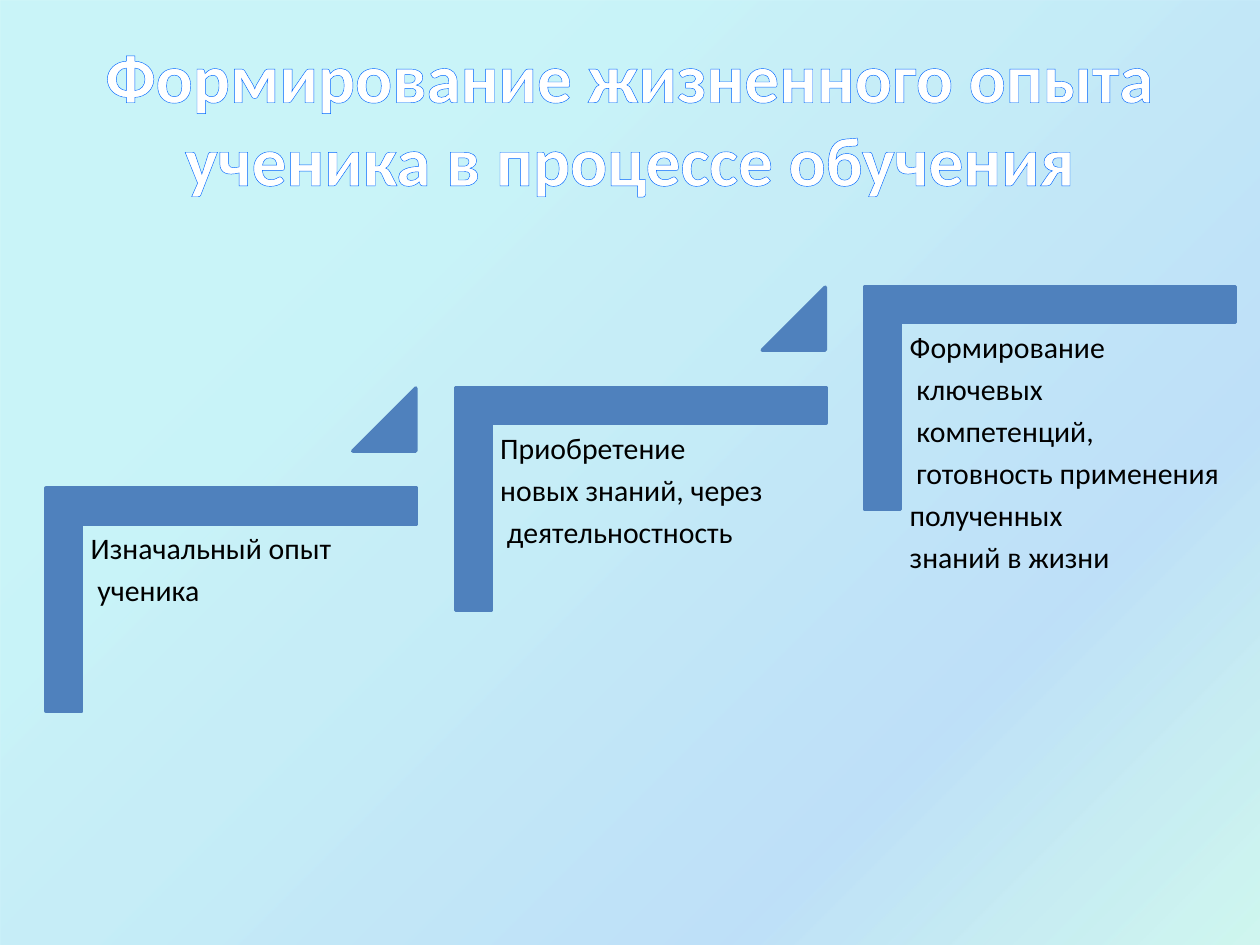
import lxml.etree
import pptx
import pptx.dml.color
import pptx.enum.shapes
import pptx.enum.text
import pptx.oxml
import pptx.oxml.ns
import pptx.util

SHAPE = pptx.enum.shapes.MSO_SHAPE
ALIGN = pptx.enum.text.PP_ALIGN
ANCHOR = pptx.enum.text.MSO_ANCHOR


def color(code):
    return pptx.dml.color.RGBColor.from_string(code)


def cells(count):
    """Length of a number of grid cells; the slide is 40 columns by 30 rows."""
    return pptx.util.Inches(count * 0.25)


class StairSlide:
    font = "Calibri"
    accent = "4F81BD"
    ink = "000000"

    def __init__(self, deck):
        self.page = deck.slides.add_slide(deck.slide_layouts[6])

    def shape(self, kind, area):
        shape = self.page.shapes.add_shape(kind, *map(cells, area))
        shape.shadow.inherit = False
        return shape

    def backdrop(self, area, stops):
        """Diagonal gradient; each stop is place, colour and opacity in percent."""
        box = self.shape(SHAPE.RECTANGLE, area)
        box.line.fill.background()
        box.fill.gradient()
        gradient = box.fill._fill._gradFill
        for child in list(gradient):
            gradient.remove(child)
        name = pptx.oxml.ns.qn
        stop_list = lxml.etree.SubElement(gradient, name("a:gsLst"))
        for place, code, opacity in stops:
            stop = lxml.etree.SubElement(stop_list, name("a:gs"), pos=str(place * 1000))
            tint = lxml.etree.SubElement(stop, name("a:srgbClr"), val=code)
            lxml.etree.SubElement(tint, name("a:alpha"), val=str(opacity * 1000))
        lxml.etree.SubElement(gradient, name("a:lin"), ang=str(45 * 60000), scaled="0")

    def solid(self, kind, area, adjustments, turn=0):
        shape = self.shape(kind, area)
        shape.rotation = turn
        for index, value in enumerate(adjustments):
            shape.adjustments[index] = value
        shape.fill.solid()
        shape.fill.fore_color.rgb = color(self.accent)
        shape.line.color.rgb = color(self.accent)
        shape.line.width = pptx.util.Pt(2)

    def frame(self, area):
        frame = self.page.shapes.add_textbox(*map(cells, area)).text_frame
        frame.word_wrap = True
        return frame

    def span(self, para, words, size, code):
        span = para.add_run()
        span.text = words
        span.font.name = self.font
        span.font.size = pptx.util.Pt(size)
        span.font.color.rgb = color(code)
        return span

    def title(self, area, words):
        frame = self.frame(area)
        frame.vertical_anchor = ANCHOR.MIDDLE
        para = frame.paragraphs[0]
        para.alignment = ALIGN.CENTER
        span = self.span(para, words, 39.6, "FFFFFF")
        span.font.bold = True
        # Blue outline around the letters
        outline = pptx.oxml.parse_xml(
            f'<a:ln {pptx.oxml.ns.nsdecls("a")} w="{pptx.util.Pt(1.45)}">'
            '<a:solidFill><a:srgbClr val="0066FF"/></a:solidFill></a:ln>')
        span.font._element.insert(0, outline)

    def label(self, area, lines):
        frame = self.frame(area)
        frame.margin_left = frame.margin_right = pptx.util.Inches(0.07)
        frame.margin_top = frame.margin_bottom = pptx.util.Inches(0.07)
        for index, words in enumerate(lines):
            para = frame.add_paragraph() if index else frame.paragraphs[0]
            para.line_spacing = 0.9
            para.space_after = pptx.util.Pt(5.6)
            self.span(para, words, 17, self.ink)

    def step(self, index, lines, has_next):
        """One stair: each is 13 columns right of and 3.2 rows above the last."""
        right, up = 13 * index, 3.2 * index
        self.solid(SHAPE.CORNER, (3.8 + right, 13.16 - up, 7.08, 11.76), (0.16, 0.16), 90)
        self.label((2.6 + right, 16.68 - up, 10.6, 9.28), lines)
        if has_next:
            self.solid(SHAPE.ISOSCELES_TRIANGLE, (11.2 + right, 12.32 - up, 2, 2), (1,))


def main():
    deck = pptx.Presentation()
    deck.slide_width, deck.slide_height = cells(40), cells(30)
    slide = StairSlide(deck)

    # Background and heading
    slide.backdrop((0, 0, 40, 30.68), [(25, "21D6E0", 23), (75, "0087E6", 25),
                                       (100, "03D4A8", 18), (100, "005CBF", 26)])
    slide.title((2, 1.2, 36, 5), "Формирование жизненного опыта ученика в процессе обучения")

    # Rising stairs
    steps = [
        ["Изначальный опыт", " ученика"],
        ["Приобретение", "новых знаний, через", " деятельностность"],
        ["Формирование", " ключевых", " компетенций,", " готовность применения",
         "полученных", "знаний в жизни"],
    ]
    for index, lines in enumerate(steps):
        slide.step(index, lines, index < len(steps) - 1)

    deck.save("out.pptx")


if __name__ == "__main__":
    main()
